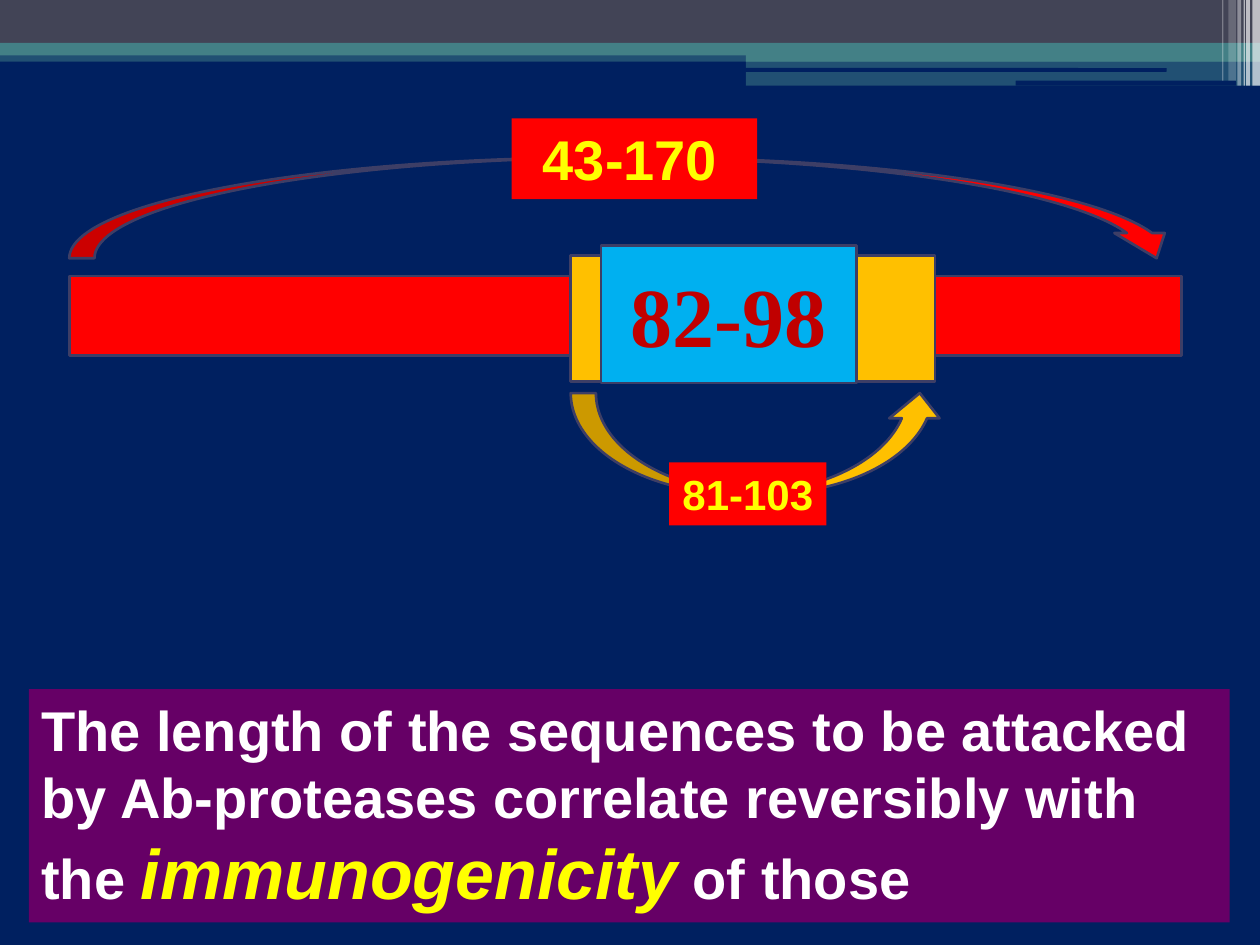
from dataclasses import dataclass
from typing import Optional

from lxml import etree
from pptx import Presentation
from pptx.dml.color import RGBColor
from pptx.enum.shapes import MSO_SHAPE
from pptx.enum.text import MSO_ANCHOR, MSO_AUTO_SIZE, PP_ALIGN
from pptx.oxml.ns import qn
from pptx.util import Inches, Pt

RECTANGLE = MSO_SHAPE.RECTANGLE
ROUNDED = MSO_SHAPE.ROUNDED_RECTANGLE
ARROW_OVER = MSO_SHAPE.CURVED_DOWN_ARROW
ARROW_UNDER = MSO_SHAPE.CURVED_UP_ARROW
LEFT, CENTER = PP_ALIGN.LEFT, PP_ALIGN.CENTER
TOP, MIDDLE = MSO_ANCHOR.TOP, MSO_ANCHOR.MIDDLE
GROW = MSO_AUTO_SIZE.SHAPE_TO_FIT_TEXT

NAVY = RGBColor(0x00, 0x20, 0x60)
SLATE = RGBColor(0x42, 0x44, 0x56)
TEAL = RGBColor(0x43, 0x80, 0x86)
WHITE = RGBColor(0xFF, 0xFF, 0xFF)
RED = RGBColor(0xFF, 0x00, 0x00)
DARK_RED = RGBColor(0xC0, 0x00, 0x00)
YELLOW = RGBColor(0xFF, 0xFF, 0x00)
GOLD = RGBColor(0xFF, 0xC0, 0x00)
SKY = RGBColor(0x00, 0xB0, 0xF0)
PURPLE = RGBColor(0x66, 0x00, 0x66)
OUTLINE = RGBColor(0x3D, 0x3E, 0x66)


@dataclass(frozen=True)
class Block:
    """A filled shape: place in inches, opacity in percent."""
    left: float
    top: float
    width: float
    height: float
    fill: RGBColor
    opacity: int = 100
    kind: MSO_SHAPE = RECTANGLE
    outline: Optional[RGBColor] = None


# Header bands, from back to front
BANDS = [
    Block(0, 0.4, 10, 0.09, TEAL, 50),
    Block(0, 0, 10, 0.34, SLATE),
    Block(0, 0.34, 10, 0.1, TEAL),
    Block(5.92, 0.39, 4.08, 0.1, TEAL),
    Block(5.92, 0.48, 4.08, 0.2, TEAL, 50),
    Block(5.91, 0.54, 3.35, 0.03, NAVY, kind=ROUNDED),
    Block(8.06, 0.64, 1.75, 0.04, NAVY, kind=ROUNDED),
]

# Thin stripes at the right edge: left, width, height, opacity
STRIPES = [
    (9.94, 0.06, 0.68, 65),
    (9.89, 0.03, 0.68, 65),
    (9.87, 0.01, 0.68, 60),
    (9.82, 0.03, 0.68, 40),
    (9.75, 0.06, 0.64, 20),
    (9.7, 0.01, 0.64, 30),
]

# Sequence diagram
WHOLE_CHAIN = Block(0.55, 2.19, 8.83, 0.63, RED, outline=OUTLINE)
WHOLE_ARROW = Block(0.55, 1.25, 8.83, 0.8, RED, kind=ARROW_OVER, outline=OUTLINE)
WHOLE_LABEL = Block(4.06, 0.94, 1.95, 0.64, RED)
REGION = Block(4.53, 2.03, 2.89, 1, GOLD, outline=OUTLINE)
REGION_ARROW = Block(4.53, 3.12, 2.97, 0.8, GOLD, kind=ARROW_UNDER, outline=OUTLINE)
REGION_LABEL = Block(5.31, 3.67, 1.25, 0.5, RED)
CORE = Block(4.77, 1.95, 2.03, 1.09, SKY, outline=OUTLINE)
CONCLUSION = Block(0.23, 5.47, 9.53, 1.85, PURPLE)


def draw_block(page, block: Block):
    shape = page.shapes.add_shape(
        block.kind, Inches(block.left), Inches(block.top),
        Inches(block.width), Inches(block.height))
    shape.shadow.inherit = False
    shape.fill.solid()
    shape.fill.fore_color.rgb = block.fill
    if block.opacity < 100:
        color = shape.fill._xPr.find(qn("a:solidFill"))[0]
        etree.SubElement(color, qn("a:alpha"), val=str(block.opacity * 1000))
    if block.outline is None:
        shape.line.fill.background()
    else:
        shape.line.color.rgb = block.outline
        shape.line.width = Pt(1.5)
    return shape


def start_text(shape, align=CENTER, anchor=TOP, auto_size=GROW):
    """Prepare the text frame and return its first paragraph."""
    frame = shape.text_frame
    frame.word_wrap = True
    frame.auto_size = auto_size
    frame.vertical_anchor = anchor
    para = frame.paragraphs[0]
    para.alignment = align
    return para


def add_span(para, text: str, *, size: float, color: RGBColor,
             font: str = "Arial", italic: bool = False) -> None:
    span = para.add_run()
    span.text = text
    span.font.name = font
    span.font.size = Pt(size)
    span.font.bold = True
    span.font.italic = italic
    span.font.color.rgb = color


def main() -> None:
    deck = Presentation()
    deck.slide_width, deck.slide_height = Inches(10), Inches(7.5)
    page = deck.slides.add_slide(deck.slide_layouts[6])
    page.background.fill.solid()
    page.background.fill.fore_color.rgb = NAVY

    # Header
    for band in BANDS:
        draw_block(page, band)
    for left, width, height, opacity in STRIPES:
        draw_block(page, Block(left, 0, width, height, WHITE, opacity))

    # Whole chain with its arrow and label
    draw_block(page, WHOLE_CHAIN)
    draw_block(page, WHOLE_ARROW)
    para = start_text(draw_block(page, WHOLE_LABEL))
    add_span(para, "43-170", size=32, color=YELLOW)
    add_span(para, " ", size=18, color=YELLOW, italic=True)

    # Inner region with its arrow and label
    draw_block(page, REGION)
    draw_block(page, REGION_ARROW)
    para = start_text(draw_block(page, REGION_LABEL))
    add_span(para, "81-103", size=24, color=YELLOW)

    # Core sequence
    para = start_text(draw_block(page, CORE), anchor=MIDDLE,
                      auto_size=MSO_AUTO_SIZE.NONE)
    add_span(para, "82-98", size=48, color=DARK_RED, font="Times New Roman")

    # Conclusion
    para = start_text(draw_block(page, CONCLUSION), align=LEFT)
    add_span(para, "The length of the sequences to be attacked by "
             "Ab-proteases correlate reversibly with the ", size=32, color=WHITE)
    add_span(para, "immunogenicity", size=40, color=YELLOW, italic=True)
    add_span(para, " of those", size=32, color=WHITE)

    deck.save("out.pptx")


if __name__ == "__main__":
    main()
